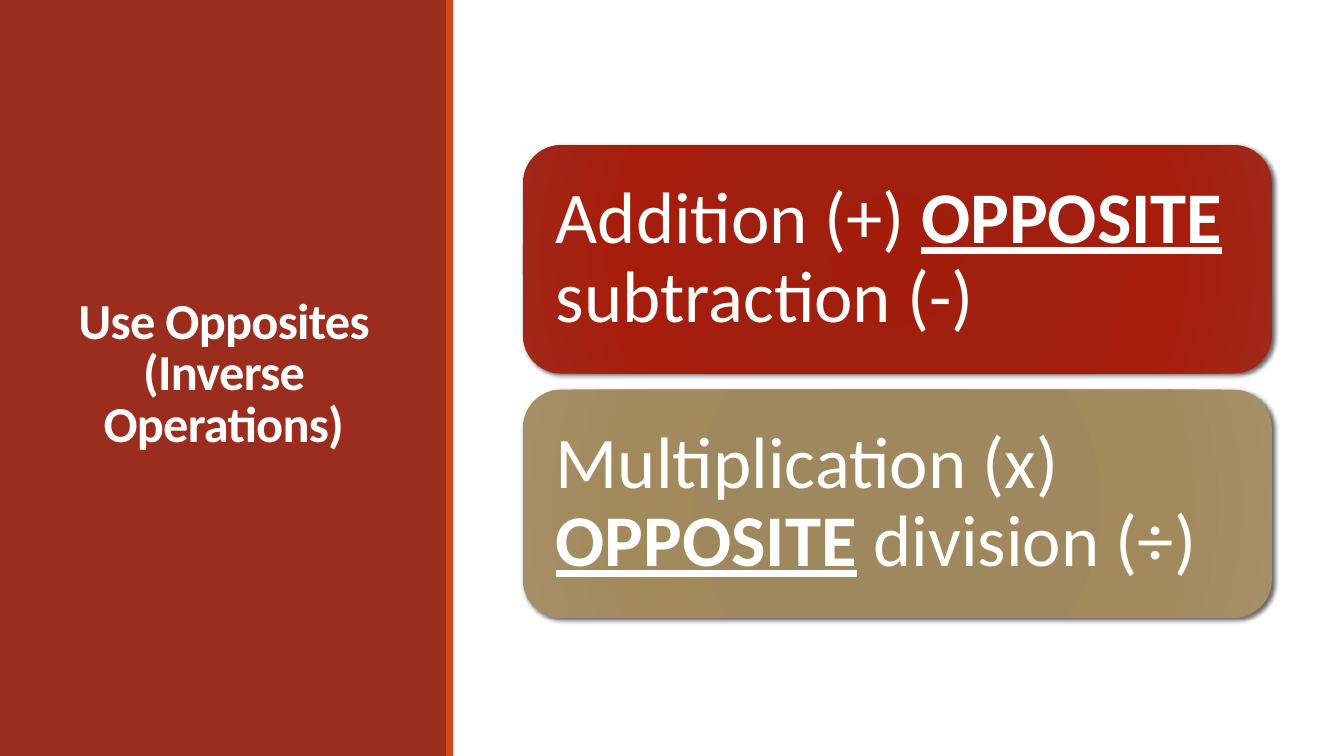
from dataclasses import dataclass

from lxml.etree import SubElement
from pptx import Presentation
from pptx.dml.color import RGBColor
from pptx.enum.shapes import MSO_SHAPE
from pptx.enum.text import MSO_ANCHOR, MSO_AUTO_SIZE, PP_ALIGN
from pptx.oxml import parse_xml
from pptx.oxml.ns import nsdecls, qn
from pptx.util import Pt


@dataclass(frozen=True)
class Theme:
    font: str = "Calibri"
    title_size: float = 36
    card_size: float = 52
    text: str = "FFFFFF"
    panel: str = "9B2D1F"
    stripe: str = "D34817"
    shadow: str = "000000"
    red_card: tuple = ("A21D0C", "A01F0F", "A61D0C", "A12819")
    tan_card: tuple = ("9F875B", "9F885D", "A38A5D", "A58F67")
    gradient_stops: tuple = (0, 34, 70, 100)


THEME = Theme()
SLIDE_WIDTH, SLIDE_HEIGHT = 960, 540
PANEL_WIDTH = 318.6
CARD_LEFT, CARD_TOP = 373.5, 103.7
CARD_WIDTH, CARD_HEIGHT, CARD_GAP = 535, 163, 11.7
CARDS = (
    (THEME.red_card, "Addition (+) ", " subtraction (-)"),
    (THEME.tan_card, "Multiplication (x) ", " division (÷)"),
)


def add_text(paragraph, text, *, size, bold=False, underline=False, spacing=0):
    run = paragraph.add_run()
    run.text = text
    font = run.font
    font.name = THEME.font
    font.size = Pt(size)
    font.bold = bold
    font.underline = underline
    font.color.rgb = RGBColor.from_string(THEME.text)
    if spacing:
        font._element.set("spc", str(round(spacing * 100)))


def add_bar(slide, left, width, color):
    bar = slide.shapes.add_shape(
        MSO_SHAPE.RECTANGLE, Pt(left), Pt(0), Pt(width), Pt(SLIDE_HEIGHT)
    )
    bar.shadow.inherit = False
    bar.fill.solid()
    bar.fill.fore_color.rgb = RGBColor.from_string(color)
    bar.line.fill.background()


def set_title(slide, text):
    title = slide.shapes.title
    title.left, title.top = Pt(5.8), Pt(41)
    title.width, title.height = Pt(308), Pt(454.3)
    frame = title.text_frame
    frame.word_wrap = True
    frame.auto_size = MSO_AUTO_SIZE.NONE
    frame.vertical_anchor = MSO_ANCHOR.MIDDLE
    paragraph = frame.paragraphs[0]
    paragraph.alignment = PP_ALIGN.CENTER
    paragraph.line_spacing = 0.85
    add_text(paragraph, text, size=THEME.title_size, bold=True, spacing=-0.5)
    slide.shapes.element.append(title.element)


def set_radial_fill(shape, colors):
    stops = "".join(
        f'<a:gs pos="{position * 1000}"><a:srgbClr val="{color}"/></a:gs>'
        for position, color in zip(THEME.gradient_stops, colors)
    )
    gradient = parse_xml(
        f'<a:gradFill {nsdecls("a")} rotWithShape="1"><a:gsLst>{stops}</a:gsLst>'
        '<a:path path="circle"><a:fillToRect l="100000" t="100000" '
        'r="100000" b="100000"/></a:path></a:gradFill>'
    )
    shape.element.spPr.find(qn("a:prstGeom")).addnext(gradient)


def set_shadow(shape, *, blur, distance, angle, opacity):
    shape.shadow.inherit = False
    effects = shape.element.spPr.find(qn("a:effectLst"))
    shadow = SubElement(
        effects,
        qn("a:outerShdw"),
        blurRad=str(Pt(blur)),
        dist=str(Pt(distance)),
        dir=str(angle * 60000),
        rotWithShape="0",
    )
    color = SubElement(shadow, qn("a:srgbClr"), val=THEME.shadow)
    SubElement(color, qn("a:alpha"), val=str(opacity * 1000))


def add_card(slide, top, colors, before, after):
    card = slide.shapes.add_shape(
        MSO_SHAPE.ROUNDED_RECTANGLE,
        Pt(CARD_LEFT), Pt(top), Pt(CARD_WIDTH), Pt(CARD_HEIGHT),
    )
    set_radial_fill(card, colors)
    card.line.fill.background()
    set_shadow(card, blur=3, distance=2, angle=45, opacity=60)
    frame = card.text_frame
    frame.word_wrap = True
    frame.vertical_anchor = MSO_ANCHOR.MIDDLE
    frame.margin_left = frame.margin_right = Pt(15.6)
    frame.margin_top = frame.margin_bottom = Pt(15.6)
    paragraph = frame.paragraphs[0]
    paragraph.alignment = PP_ALIGN.LEFT
    paragraph.line_spacing = 0.9
    add_text(paragraph, before, size=THEME.card_size)
    add_text(paragraph, "OPPOSITE", size=THEME.card_size, bold=True, underline=True)
    add_text(paragraph, after, size=THEME.card_size)


def main():
    presentation = Presentation()
    presentation.slide_width = Pt(SLIDE_WIDTH)
    presentation.slide_height = Pt(SLIDE_HEIGHT)
    slide = presentation.slides.add_slide(presentation.slide_layouts[5])
    add_bar(slide, 0, PANEL_WIDTH, THEME.panel)
    set_title(slide, "Use Opposites (Inverse Operations)")
    add_bar(slide, PANEL_WIDTH, 5, THEME.stripe)
    for index, (colors, before, after) in enumerate(CARDS):
        top = CARD_TOP + index * (CARD_HEIGHT + CARD_GAP)
        add_card(slide, top, colors, before, after)
    presentation.save("out.pptx")


if __name__ == "__main__":
    main()
